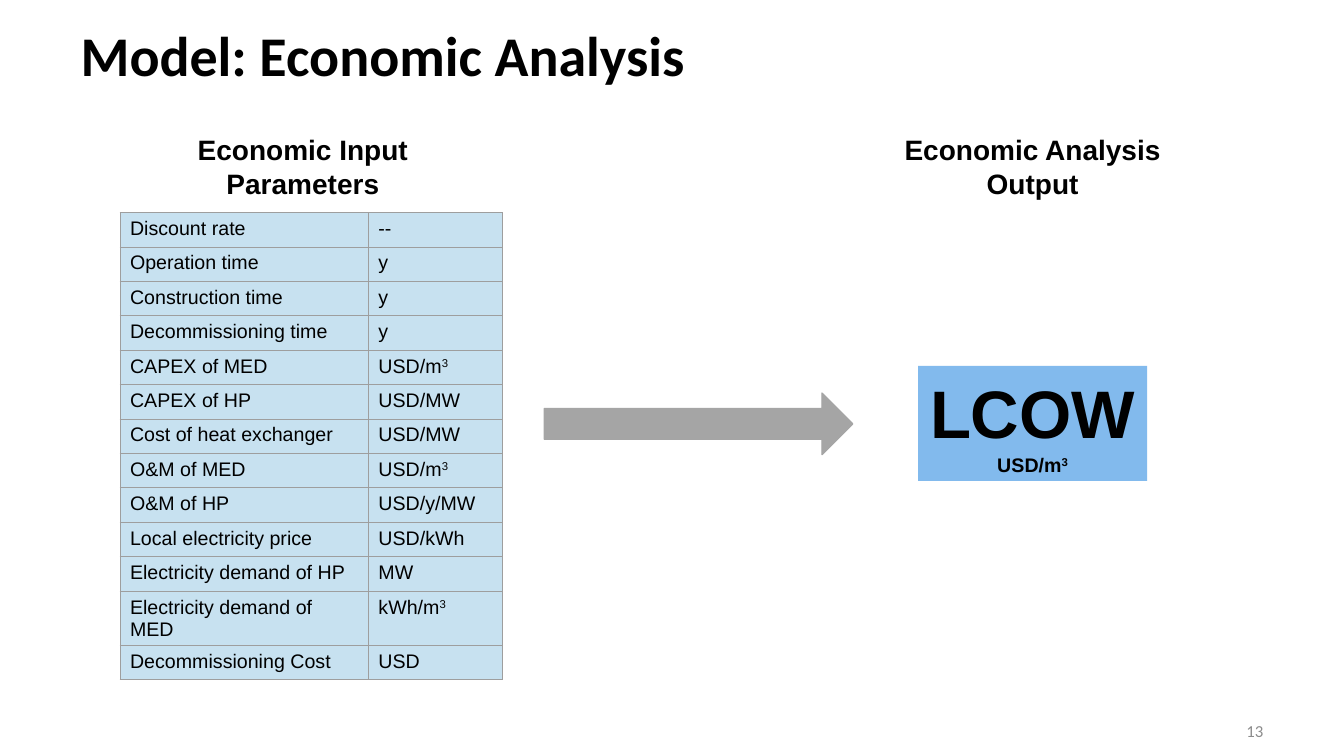
from lxml.etree import SubElement
from pptx import Presentation
from pptx.dml.color import RGBColor
from pptx.enum.shapes import MSO_SHAPE
from pptx.enum.text import MSO_ANCHOR, PP_ALIGN
from pptx.oxml.ns import qn
from pptx.util import Inches, Pt

COLORS = {"ink": "000000", "cell": "C7E1F0", "rule": "9E9E9E",
          "arrow": "A5A5A5", "output": "82BAED", "number": "8C8C8C"}
GRID = Inches(1 / 12)
COLUMNS, ROWS = 160, 90
PARAMETERS = [
    ("Discount rate", "--"),
    ("Operation time", "y"),
    ("Construction time", "y"),
    ("Decommissioning time", "y"),
    ("CAPEX of MED", "USD/m^3"),
    ("CAPEX of HP", "USD/MW"),
    ("Cost of heat exchanger", "USD/MW"),
    ("O&M of MED", "USD/m^3"),
    ("O&M of HP", "USD/y/MW"),
    ("Local electricity price", "USD/kWh"),
    ("Electricity demand of HP", "MW"),
    ("Electricity demand of MED", "kWh/m^3"),
    ("Decommissioning Cost", "USD"),
]


def color(name):
    """Return the named colour."""
    return RGBColor.from_string(COLORS[name])


def place(box):
    """Turn a box in grid columns and rows into slide lengths."""
    return [round(length * GRID) for length in box]


def write(paragraph, text, size, font="Arial", bold=False, ink="ink", align=PP_ALIGN.LEFT):
    """Write one paragraph, raising whatever follows a caret."""
    base, _, power = text.partition("^")
    paragraph.add_run().text = base
    if power:
        raised = paragraph.add_run()
        raised.text = power
        raised.font._element.set("baseline", "30000")
    paragraph.alignment = align
    paragraph.font.size = Pt(size)
    paragraph.font.name = font
    paragraph.font.bold = bold
    paragraph.font.color.rgb = color(ink)


def clear_margins(frame):
    """Remove the inner margins of a text frame."""
    frame.margin_left = frame.margin_right = frame.margin_top = frame.margin_bottom = 0


def add_title(slide, box):
    """Move and format the title placeholder."""
    title = slide.shapes.title
    title.left, title.top, title.width, title.height = place(box)
    frame = title.text_frame
    clear_margins(frame)
    frame.vertical_anchor = MSO_ANCHOR.TOP
    write(frame.paragraphs[0], "Model: Economic Analysis", 40, "Calibri", True)
    frame.paragraphs[0].line_spacing = 0.9


def add_heading(slide, box, text):
    """Add a centred bold heading."""
    frame = slide.shapes.add_textbox(*place(box)).text_frame
    frame.word_wrap = True
    write(frame.paragraphs[0], text, 20, bold=True, align=PP_ALIGN.CENTER)


def add_borders(cell):
    """Rule all four sides of a table cell."""
    properties = cell._tc.get_or_add_tcPr()
    for index, side in enumerate(("lnL", "lnR", "lnT", "lnB")):
        line = properties.makeelement(qn(f"a:{side}"), {"w": str(Pt(0.75))})
        fill = SubElement(line, qn("a:solidFill"))
        SubElement(fill, qn("a:srgbClr"), val=COLORS["rule"])
        properties.insert(index, line)


def add_parameters(slide, box):
    """Add the table of input parameters and their units."""
    left, top, width, height = place(box)
    table = slide.shapes.add_table(len(PARAMETERS), 2, left, top, width, height).table
    table.first_row = table.horz_banding = False
    table.columns[0].width = round(width * 0.65)
    table.columns[1].width = width - table.columns[0].width
    for row, texts in zip(table.rows, PARAMETERS):
        row.height = height // len(PARAMETERS)
        for cell, text in zip(row.cells, texts):
            cell.fill.solid()
            cell.fill.fore_color.rgb = color("cell")
            add_borders(cell)
            write(cell.text_frame.paragraphs[0], text, 14)


def add_block(slide, kind, box, fill):
    """Add a flat filled shape without a line."""
    block = slide.shapes.add_shape(kind, *place(box))
    block.shadow.inherit = False
    block.fill.solid()
    block.fill.fore_color.rgb = color(fill)
    block.line.fill.background()
    return block


def add_arrow(slide, box):
    """Add the arrow from the parameters to the output."""
    arrow = add_block(slide, MSO_SHAPE.RIGHT_ARROW, box, "arrow")
    arrow.line.color.rgb = color("arrow")
    arrow.line.width = Pt(1)


def add_output(slide, box):
    """Add the output block with its unit."""
    frame = add_block(slide, MSO_SHAPE.RECTANGLE, box, "output").text_frame
    frame.word_wrap = True
    frame.vertical_anchor = MSO_ANCHOR.BOTTOM
    write(frame.paragraphs[0], "LCOW", 48, bold=True, align=PP_ALIGN.CENTER)
    write(frame.add_paragraph(), "USD/m^3", 14, bold=True, align=PP_ALIGN.CENTER)


def add_number(slide, box):
    """Add the slide number."""
    frame = slide.shapes.add_textbox(*place(box)).text_frame
    clear_margins(frame)
    frame.word_wrap = True
    frame.vertical_anchor = MSO_ANCHOR.MIDDLE
    write(frame.paragraphs[0], "13", 12, "Calibri", ink="number", align=PP_ALIGN.RIGHT)


def main():
    """Build the slide and save it."""
    deck = Presentation()
    deck.slide_width, deck.slide_height = COLUMNS * GRID, ROWS * GRID
    slide = deck.slides.add_slide(deck.slide_layouts[5])
    add_title(slide, (9.6, 3.36, 140.8, 11.76))
    add_parameters(slide, (14.28, 25.32, 45.5, 53.3))
    add_heading(slide, (14.64, 15.24, 42.84, 9.24), "Economic Input Parameters")
    add_arrow(slide, (64.8, 46.8, 36.72, 7.32))
    add_output(slide, (109.32, 43.56, 27.24, 13.7))
    add_heading(slide, (101.52, 15.24, 42.84, 9.24), "Economic Analysis Output")
    add_number(slide, (146.2, 85.56, 4.2, 2.88))
    deck.save("out.pptx")


if __name__ == "__main__":
    main()
